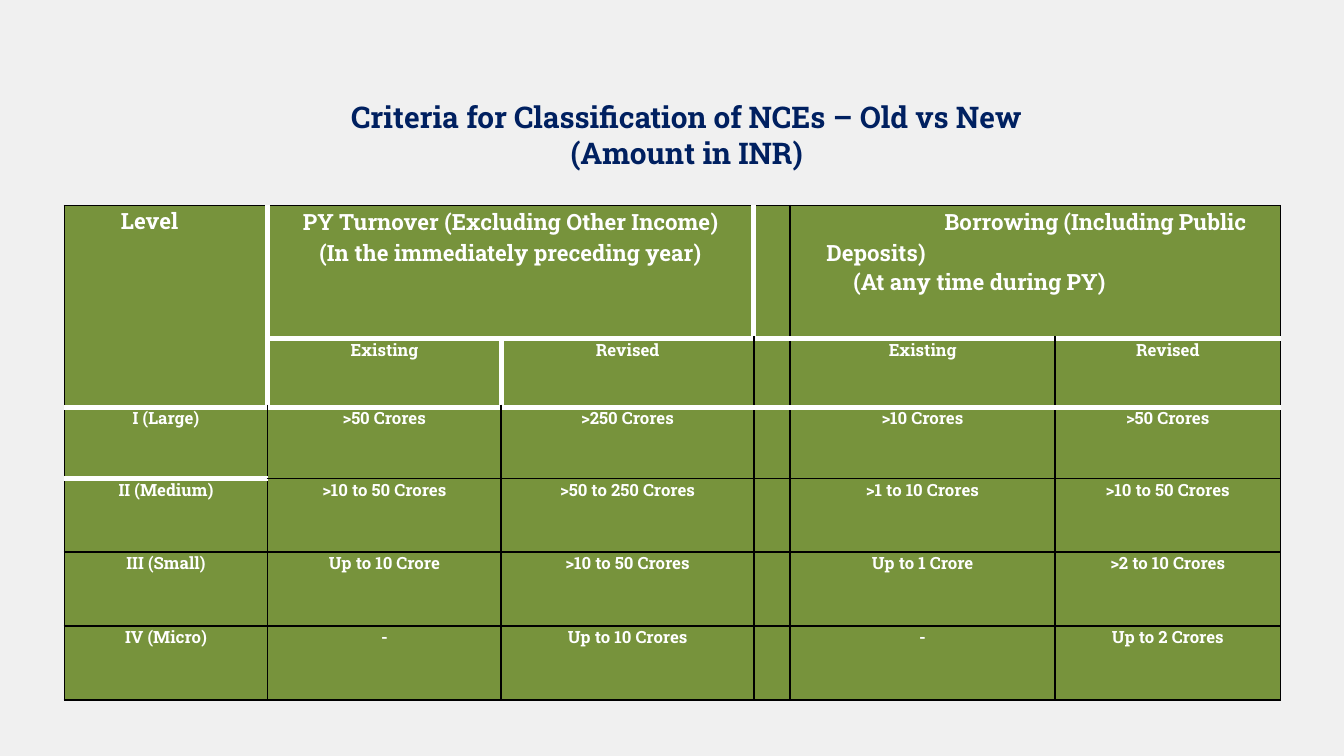
from lxml.etree import SubElement
from pptx import Presentation
from pptx.dml.color import RGBColor
from pptx.enum.text import MSO_ANCHOR, PP_ALIGN
from pptx.oxml.ns import qn
from pptx.util import Inches, Pt

HUES = {"back": "F0F0F0", "cell": "77933C", "ink": "FFFFFF", "title": "002060", "line": "000000"}
FONT = "Roboto Slab"
TITLE = "Criteria for Classification of NCEs – Old vs New (Amount in INR)"
HEADS = [
    (0, [("Level", dict(left=0.42, mid=False, gap=3.3))]),
    (1, [("PY Turnover (Excluding Other Income) (In the immediately preceding year)",
          dict(left=0.18, right=0.18, lead=1.04, gap=3.3))]),
    (4, [("Borrowing (Including Public Deposits)",
          dict(left=0.27, first=0.88, mid=False, lead=1.04, gap=3.3)),
         ("(At any time during PY)", dict(left=0.47, mid=False, gap=0.1))]),
]
ROWS = [
    ("", "Existing", "Revised", "", "Existing", "Revised"),
    ("I (Large)", ">50 Crores", ">250 Crores", "", ">10 Crores", ">50 Crores"),
    ("II (Medium)", ">10 to 50 Crores", ">50 to 250 Crores", "", ">1 to 10 Crores", ">10 to 50 Crores"),
    ("III (Small)", "Up to 10 Crore", ">10 to 50 Crores", "", "Up to 1 Crore", ">2 to 10 Crores"),
    ("IV (Micro)", "-", "Up to 10 Crores", "", "-", "Up to 2 Crores"),
]
WIDE = [1.51, 1.74, 1.88, 0.27, 1.97, 1.68]
HIGH = [0.99, 0.51, 0.53, 0.55, 0.55, 0.55]
SPANS = [(0, 0, 1, 0), (0, 1, 0, 2), (0, 4, 0, 5)]
INNER = {("v", 0, 2), ("v", 0, 5), ("h", 1, 0)}
BOLD = {("v", 0, 1), ("v", 1, 1), ("v", 0, 3), ("v", 1, 2), ("h", 3, 0)}
BOLD |= {("h", 1, c) for c in range(1, 6)} | {("h", 2, c) for c in range(6)}


def hue(name):
    return RGBColor.from_string(HUES[name])


def write(para, text, size=9, color="ink", mid=True, left=0, right=0, first=0, gap=0, lead=None):
    run = para.add_run()
    run.text = text
    font = run.font
    font.name, font.size, font.bold = FONT, Pt(size), True
    font.color.rgb = hue(color)
    para.alignment = PP_ALIGN.CENTER if mid else PP_ALIGN.LEFT
    para.space_before = Pt(gap)
    if lead:
        para.line_spacing = lead
    props = para._p.get_or_add_pPr()
    for key, inch in (("marL", left), ("marR", right), ("indent", first)):
        props.set(key, str(Inches(inch)))


def border(cell, tag, edge):
    if edge in INNER:
        return
    bold = edge in BOLD
    line = SubElement(cell._tc.get_or_add_tcPr(), qn("a:" + tag), w=str(Pt(3 if bold else 1)))
    fill = SubElement(line, qn("a:solidFill"))
    SubElement(fill, qn("a:srgbClr"), val=HUES["ink" if bold else "line"])


def style(cell, r, c):
    cell.margin_left = cell.margin_right = cell.margin_top = cell.margin_bottom = 0
    border(cell, "lnL", ("v", r, c))
    border(cell, "lnR", ("v", r, c + cell.span_width))
    border(cell, "lnT", ("h", r, c))
    border(cell, "lnB", ("h", r + cell.span_height, c))
    cell.fill.solid()
    cell.fill.fore_color.rgb = hue("cell")


deck = Presentation()
deck.slide_width = Inches(10)
deck.slide_height = deck.slide_width * 9 // 16
slide = deck.slides.add_slide(deck.slide_layouts[6])
slide.background.fill.solid()
slide.background.fill.fore_color.rgb = hue("back")

table = slide.shapes.add_table(len(HIGH), len(WIDE), Inches(0.48), Inches(1.53),
                               Inches(sum(WIDE)), Inches(sum(HIGH))).table
table.first_row = table.horz_banding = False
for col, size in zip(table.columns, WIDE):
    col.width = Inches(size)
for row, size in zip(table.rows, HIGH):
    row.height = Inches(size)
for top, left, low, right in SPANS:
    table.cell(top, left).merge(table.cell(low, right))
for r in range(len(HIGH)):
    for c in range(len(WIDE)):
        style(table.cell(r, c), r, c)

for c, lines in HEADS:
    frame = table.cell(0, c).text_frame
    for n, (text, form) in enumerate(lines):
        write(frame.add_paragraph() if n else frame.paragraphs[0], text, size=12, **form)
for r, row in enumerate(ROWS, 1):
    for c, text in enumerate(row):
        if text:
            write(table.cell(r, c).text_frame.paragraphs[0], text, gap=2.9 if r < 3 else 3.9)

frame = slide.shapes.add_textbox(Inches(0.86), Inches(0.63), Inches(8.12), Inches(0.74)).text_frame
frame.word_wrap = True
frame.vertical_anchor = MSO_ANCHOR.MIDDLE
frame.margin_left = frame.margin_right = frame.margin_top = frame.margin_bottom = Inches(0.07)
write(frame.paragraphs[0], TITLE, size=16, color="title", left=1.46, right=1.08, gap=7.5)

deck.save("out.pptx")
